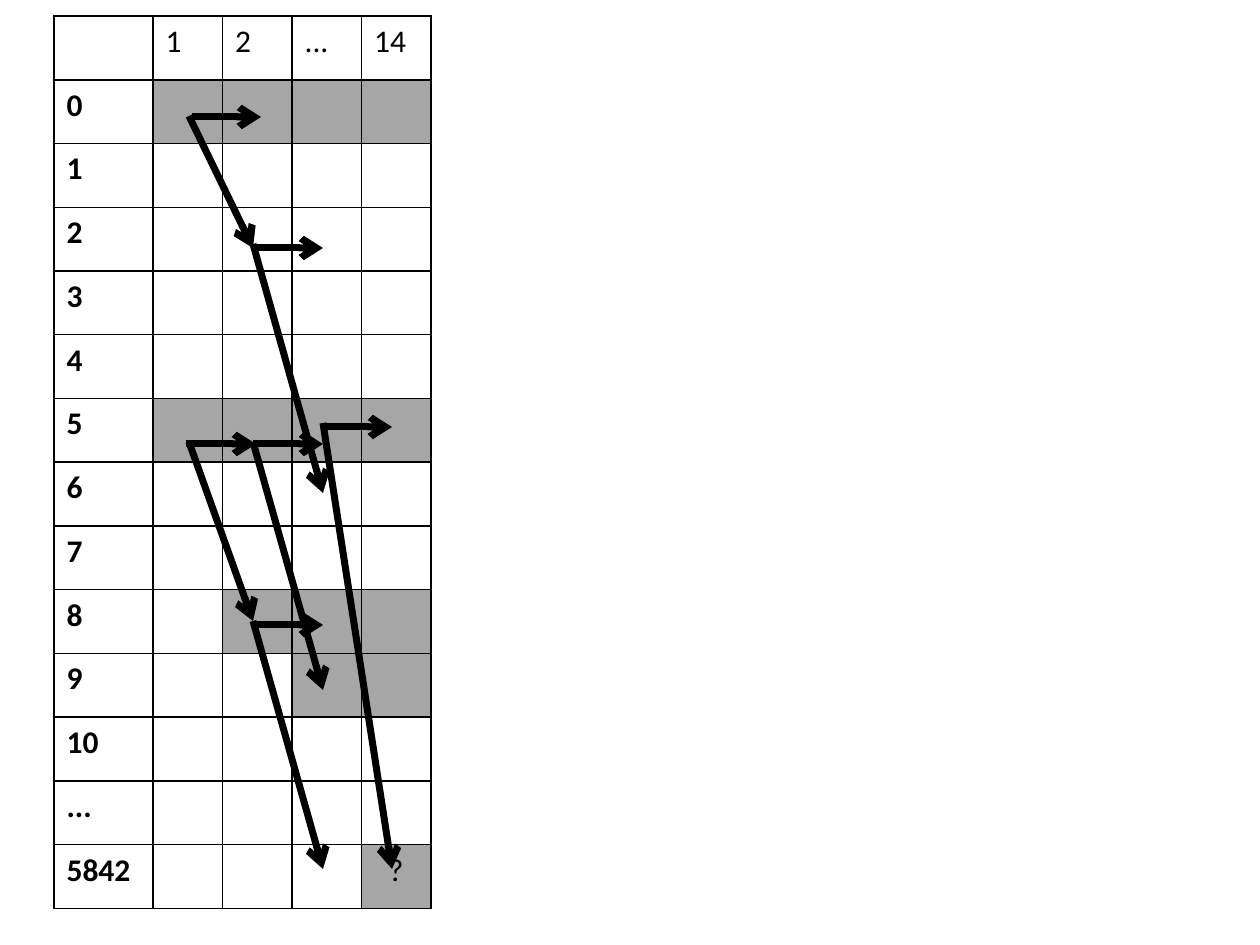
"""Build a slide with a state table and the arrows between its cells."""
from lxml import etree
from pptx import Presentation
from pptx import util as u
from pptx.dml.color import RGBColor
from pptx.enum import shapes, text
from pptx.oxml.ns import qn

SCALE = 914400 // 126
INK = {"black": "000000", "white": "FFFFFF", "grey": "A6A6A6"}
FONT = "Calibri"
HEADS = ["", "1", "2", "...", "14"]
ROWS = [str(n) for n in range(11)] + ["...", "5842"]
SHADED = {"0": 1, "5": 1, "8": 2, "9": 3, "5842": 4}
ARROWS = [
    (392, 427, 323, 427), (392, 869, 323, 423),
    (323, 625, 253, 625), (323, 869, 253, 621),
    (323, 444, 253, 444), (323, 690, 253, 442),
    (323, 248, 253, 248), (323, 493, 253, 244),
    (253, 621, 189, 442), (253, 248, 189, 116),
    (261, 117, 192, 117), (256, 444, 186, 444),
]


def px(n):
    """Turn pixels into EMU."""
    return u.Emu(n * SCALE)


def rgb(name):
    """Look up a colour by name."""
    return RGBColor.from_string(INK[name])


def edge(cell):
    """Draw a thin black border on each side of a cell."""
    props = cell._tc.get_or_add_tcPr()
    for i, side in enumerate(("a:lnL", "a:lnR", "a:lnT", "a:lnB")):
        line = etree.Element(qn(side), w=str(u.Pt(1)))
        fill = etree.SubElement(line, qn("a:solidFill"))
        etree.SubElement(fill, qn("a:srgbClr"), val=INK["black"])
        props.insert(i, line)


def style(cell, words, fill, bold=False):
    """Fill a cell and set its text."""
    cell.fill.solid()
    cell.fill.fore_color.rgb = rgb(fill)
    edge(cell)
    cell.text = words
    para = cell.text_frame.paragraphs[0]
    para.font.name = FONT
    para.font.size = u.Pt(18)
    para.font.bold = bold
    para.font.color.rgb = rgb("black")
    if words == "?":
        para.alignment = text.PP_ALIGN.CENTER


def grid(slide):
    """Add the table of states."""
    count = len(ROWS) + 1
    frame = slide.shapes.add_table(count, len(HEADS), px(54), px(16), px(377), px(893))
    table = frame.table
    for i, col in enumerate(table.columns):
        col.width = px(278) // 4 if i else px(99)
    for row in table.rows:
        row.height = px(893) // count
    for c, head in enumerate(HEADS):
        style(table.cell(0, c), head, "white")
    for r, label in enumerate(ROWS, 1):
        first = SHADED.get(label, len(HEADS))
        style(table.cell(r, 0), label, "white", True)
        for c in range(1, len(HEADS)):
            last = r == len(ROWS) and c == len(HEADS) - 1
            fill = "grey" if c >= first else "white"
            style(table.cell(r, c), "?" if last else "", fill)


def arrow(slide, ends):
    """Add a thick line with its arrowhead at the first point."""
    line = slide.shapes.add_connector(shapes.MSO_CONNECTOR.STRAIGHT, *map(px, ends))
    line.line.width = u.Pt(4)
    line.line.color.rgb = rgb("black")
    etree.SubElement(line.line._get_or_add_ln(), qn("a:headEnd"), type="arrow")
    etree.SubElement(line._element.spPr, qn("a:effectLst"))


def main():
    """Build and save the slide."""
    deck = Presentation()
    deck.slide_width, deck.slide_height = px(1260), px(945)
    slide = deck.slides.add_slide(deck.slide_layouts[6])
    grid(slide)
    for ends in ARROWS:
        arrow(slide, ends)
    deck.save("out.pptx")


if __name__ == "__main__":
    main()
